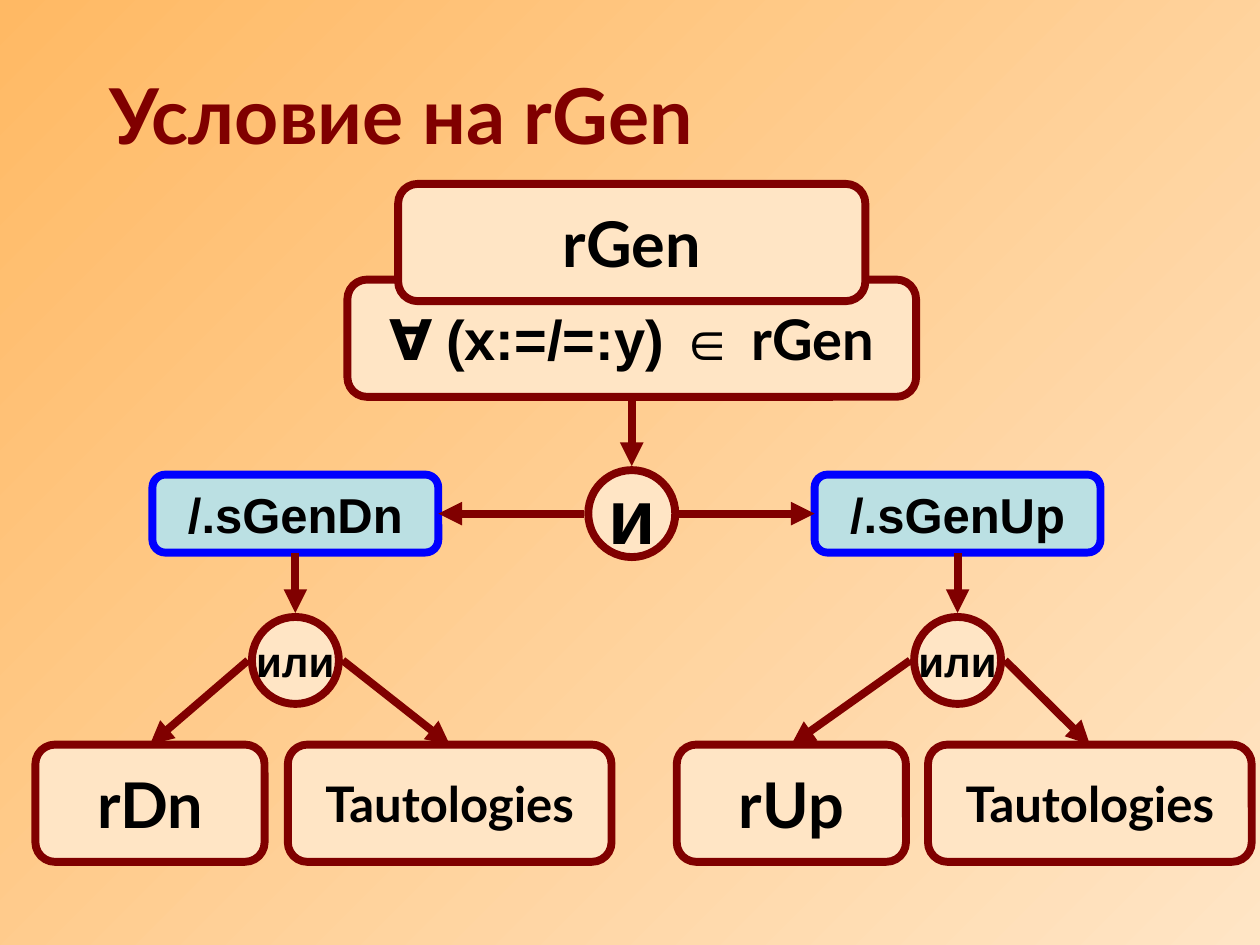
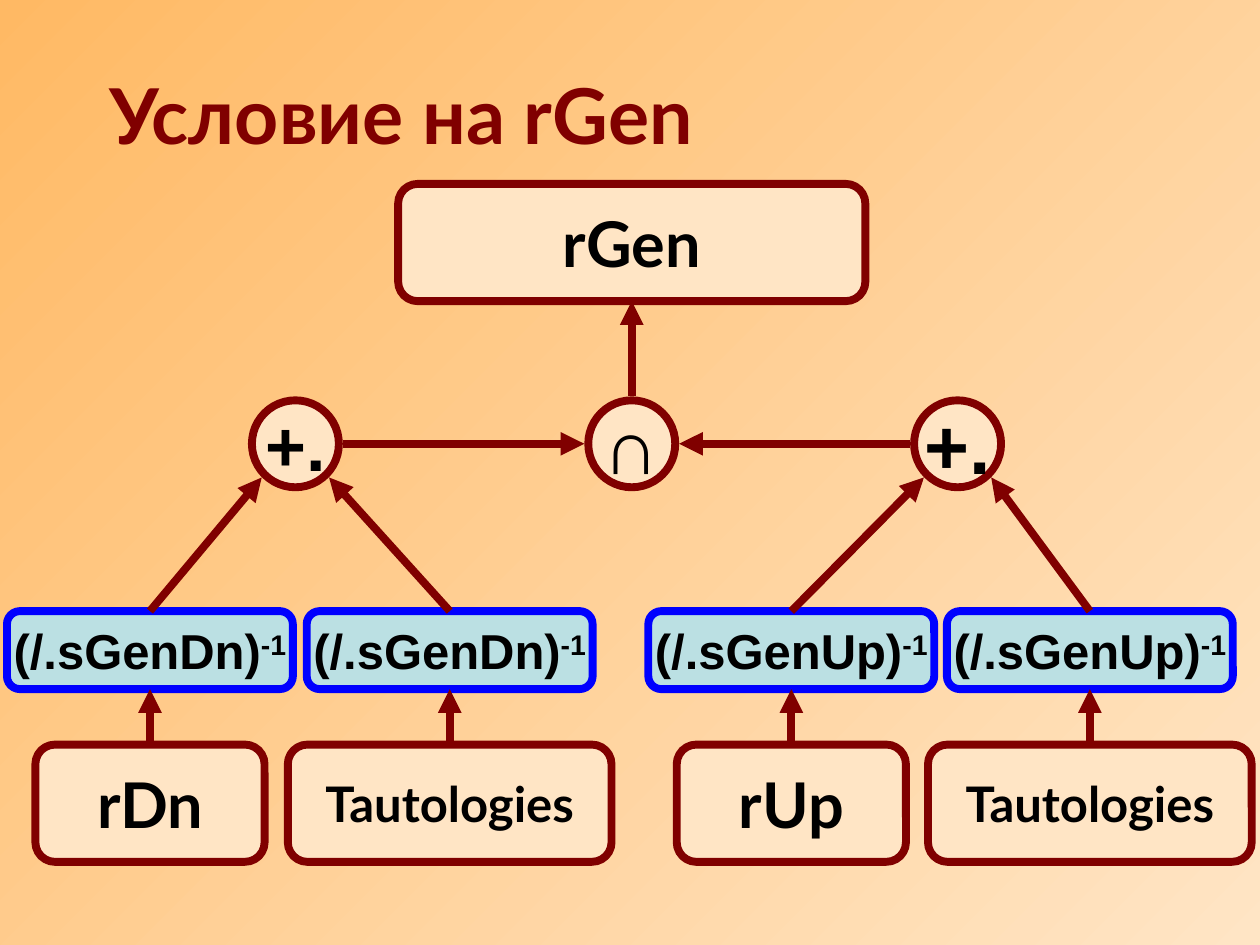
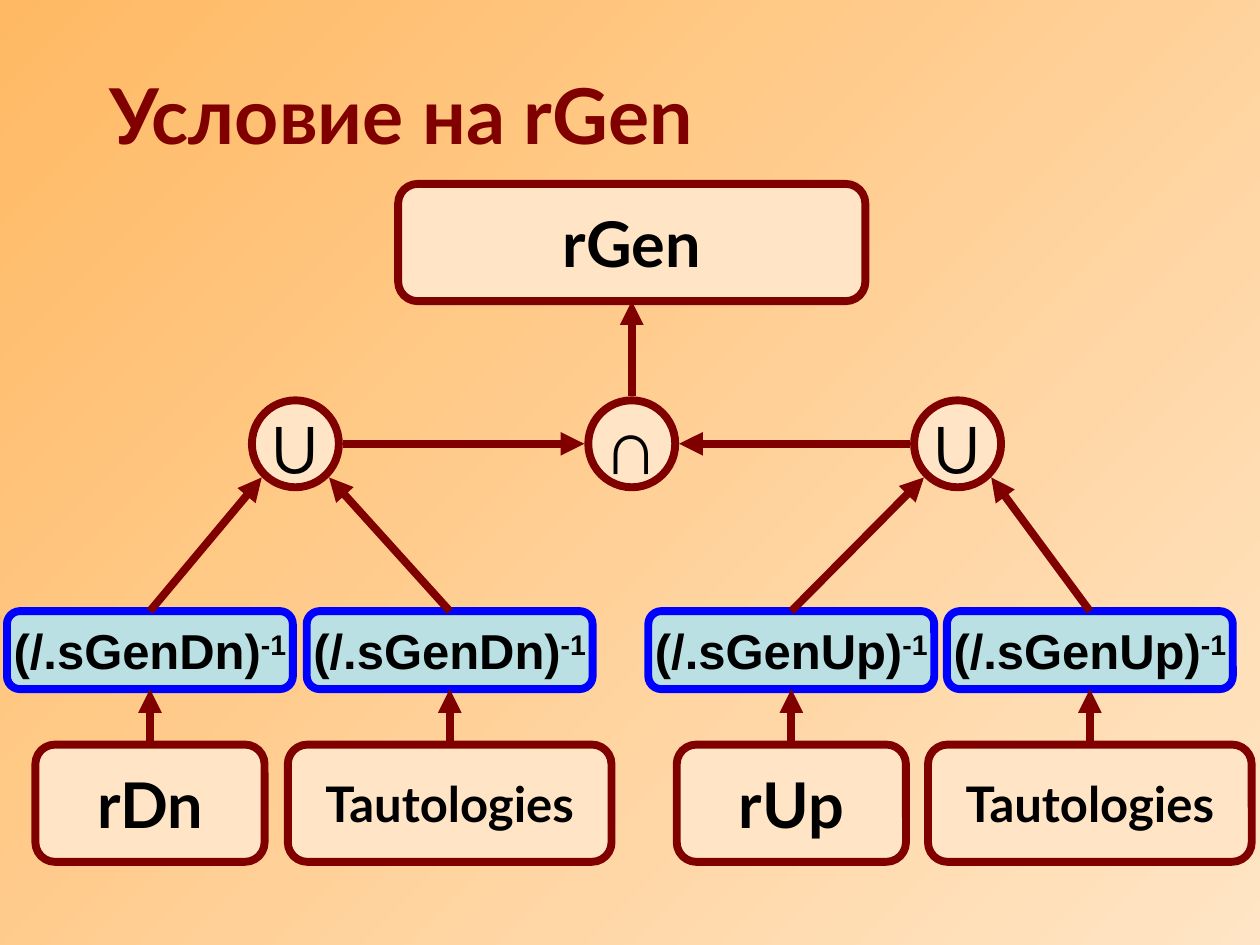
from lxml.etree import SubElement
from pptx import Presentation
from pptx.dml.color import RGBColor
from pptx.enum.shapes import MSO_CONNECTOR, MSO_SHAPE
from pptx.enum.text import MSO_ANCHOR, MSO_AUTO_SIZE, PP_ALIGN
from pptx.oxml import parse_xml
from pptx.oxml.ns import nsdecls, qn
from pptx.util import Pt

COLORS = {
    "back_start": "FFB964",
    "back_end": "FFE5C5",
    "maroon": "800000",
    "peach": "FFE5C5",
    "blue": "0000FF",
    "ice": "BBE0E3",
    "black": "000000",
    "title_shadow": "808080",
}
TEXT_FONT, CODE_FONT = "Lato", "Arial"
STROKE = 4.5
OVAL_SIZE = 49.7
DIAGONAL = 0.71

# Direction from the centre of a node, and the connection site of a rectangle
SIDES = {"top": (0, -1, 0), "left": (-1, 0, 1), "bottom": (0, 1, 2), "right": (1, 0, 3),
         "bottom_left": (-DIAGONAL, DIAGONAL, None),
         "bottom_right": (DIAGONAL, DIAGONAL, None)}

CENTER_X = 361
BRANCH_X = (168.8, 547.2)
LEAF_X = ((85.7, 257), (452.2, 622.8))
BRANCHES = ("Dn", "Up")
ROOT_Y, LEAF_Y = 138.6, 459


def rgb(name):
    return RGBColor.from_string(COLORS[name])


class Deck:
    """Holds the shared style and the slide being drawn."""

    def __init__(self):
        self.prs = Presentation()
        self.prs.slide_width, self.prs.slide_height = Pt(720), Pt(540)
        self.slide = None
        fill = self.prs.slide_master.background.fill
        fill.gradient()
        fill.gradient_angle = 315
        for stop, position, name in zip(fill.gradient_stops, (0, 1), ("back_start", "back_end")):
            stop.position = position
            stop.color.rgb = rgb(name)

    def add_slide(self, heading):
        self.slide = self.prs.slides.add_slide(self.prs.slide_layouts[5])
        title = self.slide.shapes.title
        title.left, title.top, title.width, title.height = Pt(55.4), Pt(20), Pt(656.6), Pt(90)
        frame = title.text_frame
        frame.word_wrap = True
        frame.auto_size = MSO_AUTO_SIZE.NONE
        frame.vertical_anchor = MSO_ANCHOR.MIDDLE
        frame.paragraphs[0].alignment = PP_ALIGN.LEFT
        run = self.add_run(frame.paragraphs[0], heading, 44, TEXT_FONT, "maroon")
        run.font.fill._xPr.find(qn("a:solidFill")).addnext(parse_xml(
            f'<a:effectLst {nsdecls("a")}><a:outerShdw dist="35921" dir="2700000">'
            f'<a:srgbClr val="{COLORS["title_shadow"]}"/></a:outerShdw></a:effectLst>'))

    def add_run(self, paragraph, text, size, font, color="black"):
        run = paragraph.add_run()
        run.text = text
        run.font.size = Pt(size)
        run.font.bold = True
        run.font.color.rgb = rgb(color)
        run.font.name = font
        return run

    def node(self, preset, center, size, runs, fill="peach", line="maroon"):
        """Draw a centred preset shape; runs holds (text, size, font) tuples."""
        (x, y), (width, height) = center, size
        shape = self.slide.shapes.add_shape(
            preset, Pt(x - width / 2), Pt(y - height / 2), Pt(width), Pt(height))
        shape.shadow.inherit = False
        shape.fill.solid()
        shape.fill.fore_color.rgb = rgb(fill)
        shape.line.color.rgb = rgb(line)
        shape.line.width = Pt(STROKE)
        frame = shape.text_frame
        frame.word_wrap = False
        frame.vertical_anchor = MSO_ANCHOR.MIDDLE
        paragraph = frame.paragraphs[0]
        paragraph.alignment = PP_ALIGN.CENTER
        for run in runs:
            self.add_run(paragraph, *run)
        return shape

    def box(self, x, y, width, *runs):
        return self.node(MSO_SHAPE.ROUNDED_RECTANGLE, (x, y), (width, 67), runs)

    def operation(self, x, y, text, exponent=""):
        runs = [(part, 28, CODE_FONT) for part in (text, exponent) if part]
        shape = self.node(MSO_SHAPE.ROUNDED_RECTANGLE, (x, y), (163.4, 44.6), runs, "ice", "blue")
        if exponent:
            raised = shape.text_frame.paragraphs[0].runs[-1]
            raised._r.get_or_add_rPr().set("baseline", "30000")
        return shape

    def oval(self, x, y, text, size=44):
        return self.node(MSO_SHAPE.OVAL, (x, y), (OVAL_SIZE, OVAL_SIZE),
                         [(text, size, CODE_FONT)])

    def arrow(self, start, start_side, end, end_side):
        """Join rectangles at their sides and stop just outside the rim of ovals."""
        points = []
        for shape, side in ((start, start_side), (end, end_side)):
            dx, dy, _ = SIDES[side]
            points += [int(shape.left + shape.width / 2 + dx * (shape.width + Pt(STROKE)) / 2),
                       int(shape.top + shape.height / 2 + dy * (shape.height + Pt(STROKE)) / 2)]
        connector = self.slide.shapes.add_connector(MSO_CONNECTOR.STRAIGHT, *points)
        connector.line.color.rgb = rgb("maroon")
        connector.line.width = Pt(STROKE)
        SubElement(connector.line._get_or_add_ln(), qn("a:tailEnd"), type="triangle")
        SubElement(connector._element.spPr, qn("a:effectLst"))
        for shape, side, connect in ((start, start_side, connector.begin_connect),
                                     (end, end_side, connector.end_connect)):
            if shape.auto_shape_type != MSO_SHAPE.OVAL:
                connect(shape, SIDES[side][2])

    def root(self):
        return self.box(CENTER_X, ROOT_Y, 267, ("rGen", 36, TEXT_FONT))

    def leaves(self, branch, xs):
        return (self.box(xs[0], LEAF_Y, 131, (f"r{branch}", 36, TEXT_FONT)),
                self.box(xs[1], LEAF_Y, 185, ("Tautologies", 28, TEXT_FONT)))


def condition_slide(deck):
    """The condition on rGen, split from the top down."""
    deck.add_slide("Условие на rGen")
    every_pair = deck.box(CENTER_X, 193.3, 325, ("∀ ", 32, TEXT_FONT),
                          ("(x:=/=:y) ∈ ", 32, CODE_FONT), ("rGen", 32, TEXT_FONT))
    deck.root()
    conjunction = deck.oval(CENTER_X, 293.5, "и")
    deck.arrow(every_pair, "bottom", conjunction, "top")
    for branch, x, xs, outward, inward in zip(BRANCHES, BRANCH_X, LEAF_X,
                                              ("left", "right"), ("right", "left")):
        operation = deck.operation(x, 293.5, f"/.sGen{branch}")
        choice = deck.oval(x, 377.4, "или", 24)
        deck.arrow(conjunction, outward, operation, inward)
        deck.arrow(operation, "bottom", choice, "top")
        for leaf, side in zip(deck.leaves(branch, xs), ("left", "right")):
            deck.arrow(choice, side, leaf, "top")


def construction_slide(deck, symbol, symbol_sizes):
    """rGen, put together from the bottom up."""
    deck.add_slide("Условие на rGen")
    root = deck.root()
    intersection = deck.oval(CENTER_X, 253.6, "∩")
    deck.arrow(intersection, "top", root, "bottom")
    for branch, x, xs, size, outward, inward in zip(BRANCHES, BRANCH_X, LEAF_X, symbol_sizes,
                                                    ("left", "right"), ("right", "left")):
        union = deck.oval(x, 253.6, symbol, size)
        deck.arrow(union, inward, intersection, outward)
        for leaf, leaf_x, rim in zip(deck.leaves(branch, xs), xs,
                                     ("bottom_left", "bottom_right")):
            inverse = deck.operation(leaf_x, 371.5, f"(/.sGen{branch})", "-1")
            deck.arrow(leaf, "top", inverse, "bottom")
            deck.arrow(inverse, "top", union, rim)


def main():
    deck = Deck()
    condition_slide(deck)
    construction_slide(deck, "+.", (40, 44))
    construction_slide(deck, "∪", (44, 44))
    deck.prs.save("out.pptx")


if __name__ == "__main__":
    main()
